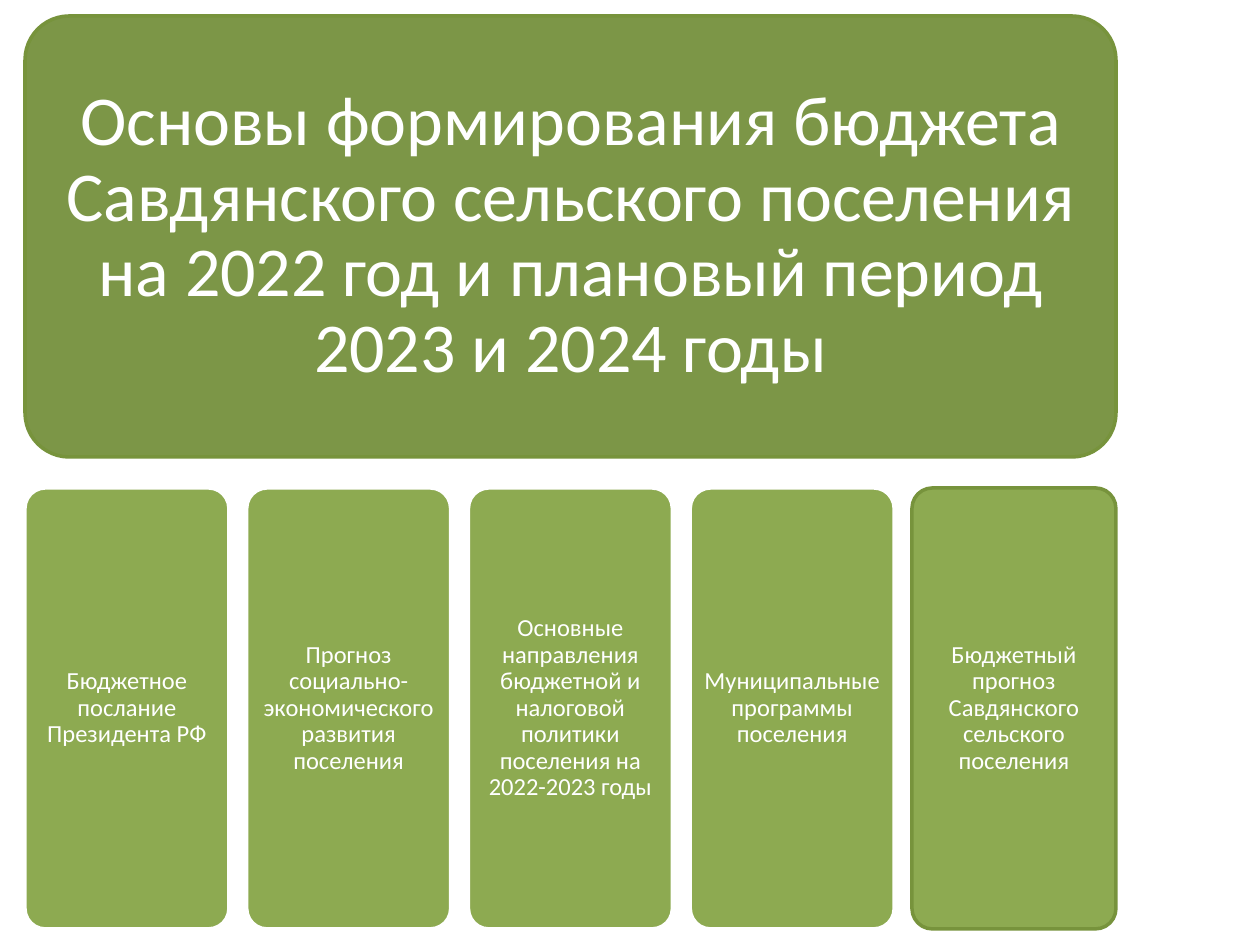
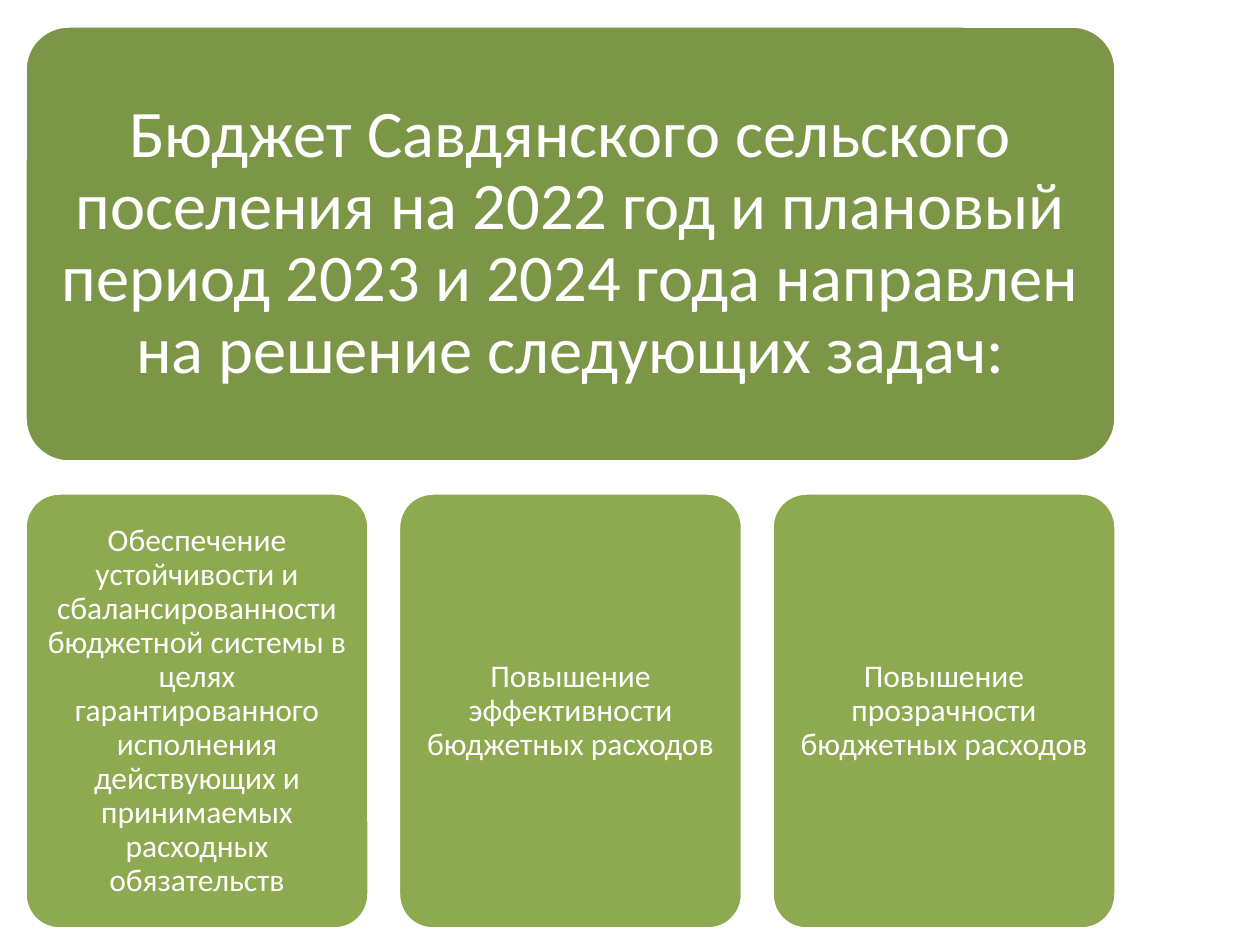
from pptx import Presentation
from pptx.dml.color import RGBColor
from pptx.enum.shapes import MSO_SHAPE
from pptx.enum.text import MSO_ANCHOR, PP_ALIGN
from pptx.util import Emu, Pt

PX_PER_INCH = 126
HEADER_GREEN = RGBColor(0x7C, 0x96, 0x47)
CARD_GREEN = RGBColor(0x8D, 0xAA, 0x51)
EDGE_GREEN = RGBColor(0x77, 0x93, 0x3C)
WHITE = RGBColor(0xFF, 0xFF, 0xFF)
FONT = "Calibri"
LEFT, WIDTH = 25, 1091


def px(n):
    return Emu(round(n * 914400 / PX_PER_INCH))


def add_panel(slide, box, text, size, fill, edge=WHITE):
    """Rounded panel with centred text; its margins grow with the text size."""
    sp = slide.shapes.add_shape(MSO_SHAPE.ROUNDED_RECTANGLE, *map(px, box))
    sp.adjustments[0] = 0.1
    sp.shadow.inherit = False
    sp.fill.solid()
    sp.fill.fore_color.rgb = fill
    sp.line.color.rgb = edge
    sp.line.width = Pt(2)

    tf = sp.text_frame
    tf.word_wrap = True
    tf.vertical_anchor = MSO_ANCHOR.MIDDLE
    tf.margin_left = tf.margin_right = Pt(0.3 * size)
    tf.margin_top = tf.margin_bottom = Pt(0.3 * size)
    p = tf.paragraphs[0]
    p.text = text
    p.alignment = PP_ALIGN.CENTER
    p.line_spacing = 0.9
    p.font.name = FONT
    p.font.size = Pt(size)
    p.font.color.rgb = WHITE


def add_card_row(slide, box, card_width, texts, size, last_edge):
    """Spread cards evenly so that the first and last touch the box sides."""
    left, top, width, height = box
    step = (width - card_width) / (len(texts) - 1)
    for i, text in enumerate(texts):
        edge = last_edge if i == len(texts) - 1 else WHITE
        card = (left + i * step, top, card_width, height)
        add_panel(slide, card, text, size, CARD_GREEN, edge)


def add_overview_slide(prs, title, title_size, cards, card_size, card_width,
                       header_top, cards_top, height, accent=WHITE):
    """Header over a row of cards; accent outlines the header and last card."""
    slide = prs.slides.add_slide(prs.slide_layouts[6])
    add_panel(slide, (LEFT, header_top, WIDTH, height), title, title_size,
              HEADER_GREEN, accent)
    add_card_row(slide, (LEFT, cards_top, WIDTH, height), card_width, cards,
                 card_size, accent)


def main():
    prs = Presentation()
    prs.slide_width, prs.slide_height = px(1260), px(945)
    add_overview_slide(
        prs,
        "Основы формирования бюджета Савдянского сельского поселения "
        "на 2022 год и плановый период 2023 и 2024 годы", 40,
        ["Бюджетное послание Президента РФ",
         "Прогноз социально-экономического развития поселения",
         "Основные направления бюджетной и налоговой политики поселения "
         "на 2022-2023 годы",
         "Муниципальные программы поселения",
         "Бюджетный прогноз Савдянского сельского поселения"], 14,
        card_width=204, header_top=16, cards_top=488, height=441,
        accent=EDGE_GREEN)
    add_overview_slide(
        prs,
        "Бюджет Савдянского сельского поселения на 2022 год и плановый "
        "период 2023 и 2024 года направлен на решение следующих задач:", 38,
        ["Обеспечение устойчивости и сбалансированности бюджетной системы "
         "в целях гарантированного исполнения действующих и принимаемых "
         "расходных обязательств",
         "Повышение эффективности бюджетных расходов",
         "Повышение прозрачности бюджетных расходов"], 18,
        card_width=344, header_top=26, cards_top=493, height=436)
    prs.save("out.pptx")


if __name__ == "__main__":
    main()
